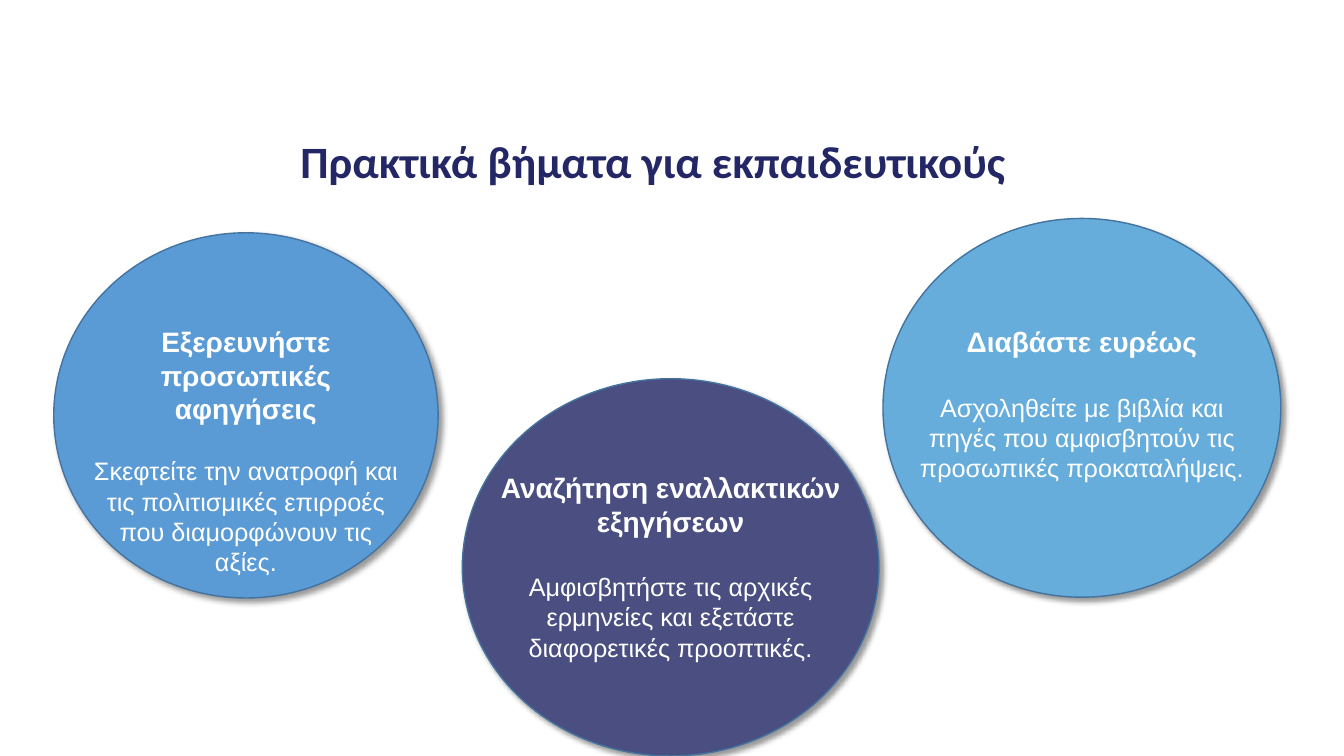
from lxml.etree import SubElement
from pptx import Presentation
from pptx.dml.color import RGBColor
from pptx.enum.shapes import MSO_SHAPE as Shape
from pptx.enum.text import MSO_ANCHOR as Anchor, MSO_AUTO_SIZE as AutoSize, PP_ALIGN as Align
from pptx.oxml.ns import qn
from pptx.util import Inches, Pt


def color(value):
    return RGBColor.from_string(value)


class StepsSlide:
    heading_font = "Calibri"
    body_font = "Arial"
    navy = "232765"
    white = "FFFFFF"
    outline = "43739E"

    def __init__(self, presentation):
        self.width = presentation.slide_width
        self.height = presentation.slide_height
        self.slide = presentation.slides.add_slide(presentation.slide_layouts[6])

    def place(self, left, top, width, height):
        return (int(self.width * left / 100), int(self.height * top / 100),
                int(self.width * width / 100), int(self.height * height / 100))

    def format(self, paragraph, font_name, size, fill, bold=False):
        paragraph.alignment = Align.CENTER
        for run in paragraph.runs:
            run.font.name = font_name
            run.font.size = Pt(size)
            run.font.bold = bold
            run.font.color.rgb = color(fill)

    def text_box(self, area, lines):
        frame = self.slide.shapes.add_textbox(*self.place(*area)).text_frame
        frame.word_wrap = True
        frame.text = "\n".join(lines)
        return frame

    def title(self, text, area):
        frame = self.text_box(area, [text])
        frame.vertical_anchor = Anchor.MIDDLE
        paragraph = frame.paragraphs[0]
        paragraph.line_spacing = 0.9
        self.format(paragraph, self.heading_font, 32, self.navy, bold=True)

    def circle(self, area, fill):
        shape = self.slide.shapes.add_shape(Shape.OVAL, *self.place(*area))
        shape.fill.solid()
        shape.fill.fore_color.rgb = color(fill)
        shape.line.color.rgb = color(self.outline)
        shape.line.width = Pt(1)
        self.soft_shadow(shape)

    def soft_shadow(self, shape):
        shape.shadow.inherit = False
        effects = shape._element.spPr.find(qn("a:effectLst"))
        shadow = SubElement(effects, qn("a:outerShdw"), blurRad=str(Pt(4)), dist=str(Pt(3)),
                            dir=str(45 * 60000), algn="tl", rotWithShape="0")
        tint = SubElement(shadow, qn("a:srgbClr"), val="000000")
        SubElement(tint, qn("a:alpha"), val="40000")

    def step(self, heading, body, circle, fill, text_top, text_width, text_height, gap):
        self.circle(circle, fill)
        left, _, width, _ = circle
        text_left = left + (width - text_width) / 2
        frame = self.text_box((text_left, text_top, text_width, text_height), [heading, body])
        frame.auto_size = AutoSize.SHAPE_TO_FIT_TEXT
        heading_paragraph, body_paragraph = frame.paragraphs
        self.format(heading_paragraph, self.body_font, 20, self.white, bold=True)
        self.format(body_paragraph, self.body_font, 18, self.white)
        body_paragraph.space_before = Pt(gap)


def main():
    presentation = Presentation()
    presentation.slide_width = Inches(13.33)
    presentation.slide_height = Inches(7.5)

    steps = StepsSlide(presentation)
    steps.title("Πρακτικά βήματα για εκπαιδευτικούς", (4, 16.7, 89.2, 9.9))
    steps.step("Εξερευνήστε προσωπικές αφηγήσεις",
               "Σκεφτείτε την ανατροφή και τις πολιτισμικές επιρροές που διαμορφώνουν τις αξίες.",
               circle=(4, 30.8, 28.6, 48.3), fill="5B9BD5",
               text_top=42.3, text_width=25.2, text_height=30.5, gap=21.5)
    steps.step("Αναζήτηση εναλλακτικών εξηγήσεων",
               "Αμφισβητήστε τις αρχικές ερμηνείες και εξετάστε διαφορετικές προοπτικές.",
               circle=(34.4, 50.1, 31, 49.9), fill="4A4E80",
               text_top=61.6, text_width=26.9, text_height=26.9, gap=24)
    steps.step("Διαβάστε ευρέως",
               "Ασχοληθείτε με βιβλία και πηγές που αμφισβητούν τις προσωπικές προκαταλήψεις.",
               circle=(65.7, 28.9, 29.6, 50.1), fill="67ADDB",
               text_top=42.3, text_width=26.7, text_height=22.4, gap=24)

    presentation.save("out.pptx")


if __name__ == "__main__":
    main()
